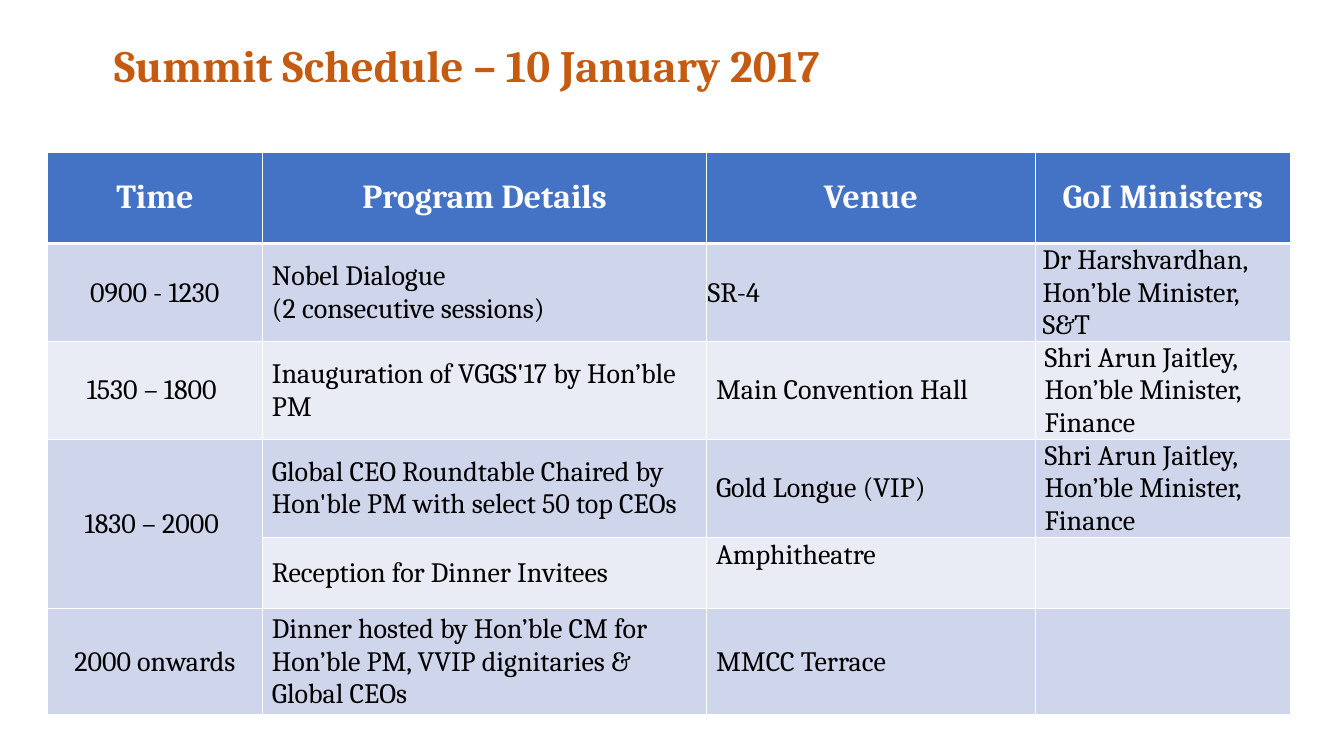
from dataclasses import dataclass

from lxml import etree
from pptx import Presentation
from pptx.dml.color import RGBColor
from pptx.enum.text import MSO_ANCHOR, MSO_AUTO_SIZE, PP_ALIGN
from pptx.oxml.ns import qn
from pptx.util import Pt

LEFT, CENTER = PP_ALIGN.LEFT, PP_ALIGN.CENTER
TOP, MIDDLE = MSO_ANCHOR.TOP, MSO_ANCHOR.MIDDLE
EMU_PER_PX = 9525
TITLE_ONLY = 5


@dataclass(frozen=True)
class Theme:
    font: str = "Cambria"
    title: str = "C55A11"
    header: str = "4472C4"
    band_dark: str = "CFD5EA"
    band_light: str = "E9EBF5"
    white: str = "FFFFFF"
    text: str = "000000"
    title_size: int = 32
    header_size: int = 24
    body_size: int = 20
    rule: int = 1
    header_rule: int = 3


THEME = Theme()
COLUMN_WIDTHS = [205, 423, 313, 243]
ROW_HEIGHTS = [87, 93, 93, 93, 68, 101]
HEADERS = ["Time", "Program Details", "Venue", "GoI Ministers"]
FINANCE = "Shri Arun Jaitley,\nHon’ble Minister, Finance"
SCHEDULE = [
    ["0900 - 1230", "Nobel Dialogue\n(2 consecutive sessions)", "SR-4",
     "Dr Harshvardhan,\nHon’ble Minister,\nS&T"],
    ["1530 – 1800 ", "Inauguration of VGGS'17 by Hon’ble PM",
     "Main Convention Hall", FINANCE],
    ["1830 – 2000 ",
     "Global CEO Roundtable Chaired by Hon'ble PM with select 50 top CEOs",
     "Gold Longue (VIP)", FINANCE],
    ["", "Reception for Dinner Invitees", "Amphitheatre", ""],
    ["2000 onwards",
     "Dinner hosted by Hon’ble CM for Hon’ble PM, VVIP dignitaries & Global CEOs",
     "MMCC Terrace", ""],
]
# Left insets that differ from the usual one, by (row, column)
LEFT_INSETS = {(1, 2): 1, (1, 3): 7}


def px(n):
    return n * EMU_PER_PX


def write(tf, text, *, size, color, bold=False, align=LEFT, spacing=None):
    p = tf.paragraphs[0]
    p.text = text
    p.alignment = align
    if spacing:
        p.line_spacing = spacing
    for r in p.runs:
        r.font.name = THEME.font
        r.font.size = Pt(size)
        r.font.bold = bold
        r.font.color.rgb = RGBColor.from_string(color)


def set_margins(box, left, top, right, bottom):
    box.margin_left, box.margin_top = px(left), px(top)
    box.margin_right, box.margin_bottom = px(right), px(bottom)


def add_title(s, text):
    sp = s.shapes.title
    sp.left, sp.top, sp.width, sp.height = px(99), px(36), px(1050), px(57)
    tf = sp.text_frame
    tf.auto_size = MSO_AUTO_SIZE.NONE
    tf.word_wrap = True
    tf.vertical_anchor = MIDDLE
    write(tf, text, size=THEME.title_size, color=THEME.title, bold=True, spacing=0.9)


def set_borders(cell, **widths):
    """Draw white edges; keys are L, R, T and B in schema order, widths in points."""
    tc_pr = cell._tc.get_or_add_tcPr()
    for side, width in widths.items():
        ln = etree.SubElement(tc_pr, qn(f"a:ln{side}"), w=str(Pt(width)))
        fill = etree.SubElement(ln, qn("a:solidFill"))
        etree.SubElement(fill, qn("a:srgbClr"), val=THEME.white)


def style_cell(cell, row):
    thin, thick = THEME.rule, THEME.header_rule
    set_borders(cell, L=thin, R=thin, T=thick if row == 1 else thin,
                B=thick if row == 0 else thin)
    band = THEME.band_dark if row % 2 else THEME.band_light
    cell.fill.solid()
    cell.fill.fore_color.rgb = RGBColor.from_string(band if row else THEME.header)
    cell.vertical_anchor = MIDDLE


def fill_body_cell(cell, text, row, col):
    set_margins(cell, LEFT_INSETS.get((row, col), 9 if col else 1), 1, 1, 0)
    if text == "Amphitheatre":
        cell.vertical_anchor = TOP
        cell.margin_top = px(2)
    if text:
        write(cell.text_frame, text, size=THEME.body_size, color=THEME.text,
              align=LEFT if col else CENTER)


def add_schedule(s):
    table = s.shapes.add_table(len(ROW_HEIGHTS), len(COLUMN_WIDTHS), px(45), px(145),
                               px(sum(COLUMN_WIDTHS)), px(sum(ROW_HEIGHTS))).table
    for column, width in zip(table.columns, COLUMN_WIDTHS):
        column.width = px(width)
    for row, height in zip(table.rows, ROW_HEIGHTS):
        row.height = px(height)
    for i, texts in enumerate([HEADERS, *SCHEDULE]):
        for j, text in enumerate(texts):
            cell = table.cell(i, j)
            style_cell(cell, i)
            if i:
                fill_body_cell(cell, text, i, j)
            else:
                write(cell.text_frame, text, size=THEME.header_size,
                      color=THEME.white, bold=True, align=CENTER)
    table.cell(3, 0).merge(table.cell(4, 0))


def main():
    prs = Presentation()
    prs.slide_width, prs.slide_height = px(1280), px(720)
    s = prs.slides.add_slide(prs.slide_layouts[TITLE_ONLY])
    add_title(s, "Summit Schedule – 10 January 2017")
    add_schedule(s)
    prs.save("out.pptx")


if __name__ == "__main__":
    main()
